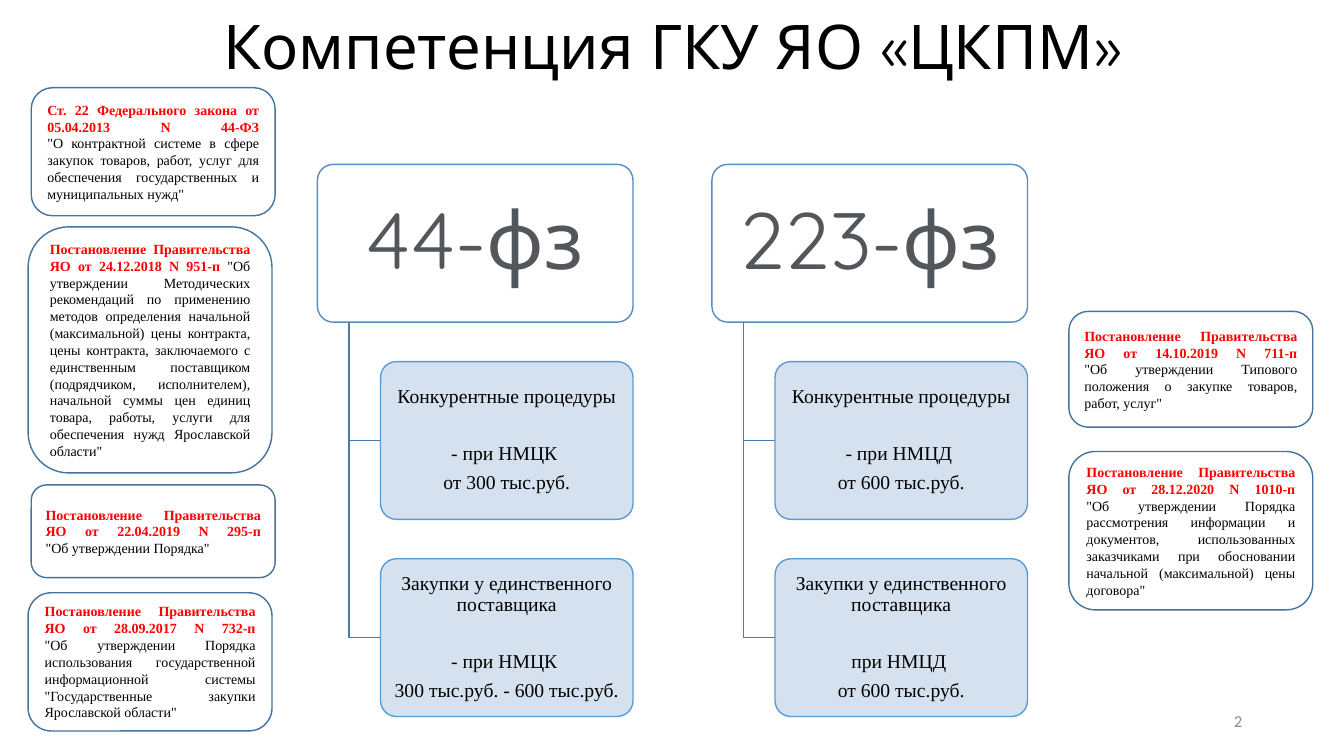
from lxml import etree
from pptx import Presentation
from pptx import util as u
from pptx.dml.color import RGBColor
from pptx.enum import shapes, text
from pptx.oxml.ns import qn

COLORS = {
    "white": "FFFFFF", "black": "000000", "red": "FF0000", "grey": "8C8C8C",
    "card": "D2DEEF", "card_line": "5B9BD5", "law_line": "538DC1",
    "branch": "497CAB", "note_line": "43739E",
    "law_dark": "53575C", "law_light": "C5C7CA",
}
CELL = 0.313  # inches, side of one grid cell
SERIF, DISPLAY, PLAIN = "Times New Roman", "Quicksand", "Calibri"

# Sizes of the two trees, in grid cells
TREE_LEFT, TREE_TOP, TREE_STEP = 10.06, 5.21, 12.5
LAW_WIDTH, BOX_HEIGHT, ROW_STEP = 10, 5, 6.25
STEM_OFFSET, CARD_OFFSET, CARD_WIDTH = 1, 2, 8
NOTE_WIDTH = 7.73

TREES = [
    ("44-фз", [
        ("Конкурентные процедуры", "- при НМЦК ", "от 300 тыс.руб."),
        ("Закупки у единственного поставщика", "- при НМЦК ",
         "300 тыс.руб. - 600 тыс.руб."),
    ]),
    ("223-фз", [
        ("Конкурентные процедуры", "- при НМЦД ", "от 600 тыс.руб."),
        ("Закупки у единственного поставщика", "при НМЦД ", "от 600 тыс.руб."),
    ]),
]
DECREE = "Постановление Правительства ЯО от "
# Column, row, height in cells; heading; body. A heading ending in \n stands on its own lines.
NOTES = [
    (0.99, 2.78, 4.06, "Ст. 22 Федерального закона от 05.04.2013 N 44-ФЗ\n",
     "\"О контрактной системе в сфере закупок товаров, работ, услуг для "
     "обеспечения государственных и муниципальных нужд\""),
    (0.89, 7.19, 7.8, DECREE + "24.12.2018 N 951-п ",
     "\"Об утверждении Методических рекомендаций по применению методов "
     "определения начальной (максимальной) цены контракта, цены контракта, "
     "заключаемого с единственным поставщиком (подрядчиком, исполнителем), "
     "начальной суммы цен единиц товара, работы, услуги для обеспечения нужд "
     "Ярославской области\""),
    (0.99, 15.37, 2.94, DECREE + "22.04.2019 N 295-п\n",
     "\"Об утверждении Порядка\""),
    (0.89, 18.79, 4.38, DECREE + "28.09.2017 N 732-п\n",
     "\"Об утверждении Порядка использования государственной информационной "
     "системы \"Государственные закупки Ярославской области\""),
    (33.87, 9.87, 3.67, DECREE + "14.10.2019 N 711-п\n",
     "\"Об утверждении Типового положения о закупке товаров, работ, услуг\""),
    (33.87, 14.31, 5.02, DECREE + "28.12.2020 N 1010-п\n",
     "\"Об утверждении Порядка рассмотрения информации и документов, "
     "использованных заказчиками при обосновании начальной (максимальной) "
     "цены договора\""),
]


def color(name):
    return RGBColor.from_string(COLORS[name])


def cells(*counts):
    return [u.Inches(count * CELL) for count in counts]


class Board:
    """Holds the current slide and draws its elements in grid cells."""

    def __init__(self, deck):
        self.deck = deck
        self.page = deck.slides.add_slide(deck.slide_layouts[5])

    def style(self, para, size, font, shade="black", align="CENTER"):
        para.alignment = getattr(text.PP_ALIGN, align)
        para.font.size = u.Pt(size)
        para.font.name = font
        para.font.color.rgb = color(shade)

    def title(self, wording):
        box = self.page.shapes.title
        box.left, box.top = u.Inches(0.92), 0
        box.width, box.height = u.Inches(11.5), u.Inches(0.99)
        box.text_frame.text = wording
        box.text_frame.vertical_anchor = text.MSO_ANCHOR.MIDDLE
        para = box.text_frame.paragraphs[0]
        para.line_spacing = 0.9
        self.style(para, 44, DISPLAY)

    def rounded(self, column, row, width, height, fill, line, insets=(0.1, 0.05)):
        box = self.page.shapes.add_shape(
            shapes.MSO_SHAPE.ROUNDED_RECTANGLE, *cells(column, row, width, height))
        box.shadow.inherit = False
        box.fill.solid()
        box.fill.fore_color.rgb = color(fill)
        box.line.color.rgb = color(line)
        box.line.width = u.Pt(1)
        frame = box.text_frame
        frame.word_wrap = True
        frame.vertical_anchor = text.MSO_ANCHOR.MIDDLE
        frame.margin_left = frame.margin_right = u.Inches(insets[0])
        frame.margin_top = frame.margin_bottom = u.Inches(insets[1])
        return box

    def law(self, column, row, name):
        box = self.rounded(column, row, LAW_WIDTH, BOX_HEIGHT, "white", "law_line",
                           (0.12, 0.08))
        box.adjustments[0] = 0.1
        para = box.text_frame.paragraphs[0]
        para.line_spacing = 0.9
        self.style(para, 57, DISPLAY, "law_dark")
        span = para.add_run()
        span.text = name
        span.font.fill.gradient()
        span.font.fill.gradient_angle = 270
        shades = [(0.21, "law_dark"), (0.88, "law_light")]
        for stop, (position, shade) in zip(span.font.fill.gradient_stops, shades):
            stop.position = position
            stop.color.rgb = color(shade)

    def branch(self, column, top, bottom):
        """Draw an elbow from under a law box to the side of a card."""
        start_x, start_y, end_x, end_y = cells(
            column, top, column + CARD_OFFSET - STEM_OFFSET, bottom)
        builder = self.page.shapes.build_freeform(start_x, start_y)
        builder.add_line_segments([(start_x, end_y), (end_x, end_y)], close=False)
        elbow = builder.convert_to_shape()
        elbow.shadow.inherit = False
        elbow.fill.background()
        elbow.line.color.rgb = color("branch")
        elbow.line.width = u.Pt(1)

    def card(self, column, row, lines):
        box = self.rounded(column, row, CARD_WIDTH, BOX_HEIGHT, "card", "card_line",
                           (0.03, 0.02))
        box.adjustments[0] = 0.1
        fill_color = box.fill._xPr.find(qn("a:solidFill"))[0]
        etree.SubElement(fill_color, qn("a:alpha"), val="90000")
        frame = box.text_frame
        frame.text = "\n".join(lines)
        for index, para in enumerate(frame.paragraphs):
            para.line_spacing = 0.9
            para.space_after = u.Pt(5.5 if index else 25.5)
            self.style(para, 14, SERIF)

    def note(self, column, row, height, heading, body):
        box = self.rounded(column, row, NOTE_WIDTH, height, "white", "note_line")
        para = box.text_frame.paragraphs[0]
        self.style(para, 10, SERIF, align="JUSTIFY")
        span = para.add_run()
        span.text = heading.rstrip("\n")
        span.font.bold = True
        span.font.color.rgb = color("red")
        if heading.endswith("\n"):
            para.add_line_break()
        span = para.add_run()
        span.text = body
        span.font.color.rgb = color("black")

    def page_number(self, number):
        box = self.page.shapes.add_textbox(
            u.Inches(9.42), u.Inches(6.95), u.Inches(3), u.Inches(0.4))
        frame = box.text_frame
        frame.word_wrap = True
        frame.vertical_anchor = text.MSO_ANCHOR.MIDDLE
        frame.text = number
        self.style(frame.paragraphs[0], 12, PLAIN, "grey", "RIGHT")


def main():
    deck = Presentation()
    deck.slide_width, deck.slide_height = u.Inches(13.33), u.Inches(7.5)
    board = Board(deck)
    board.title("Компетенция ГКУ ЯО «ЦКПМ»")
    for tree, (law, cards) in enumerate(TREES):
        left = TREE_LEFT + tree * TREE_STEP
        board.law(left, TREE_TOP, law)
        for level, lines in enumerate(cards, start=1):
            row = TREE_TOP + level * ROW_STEP
            board.branch(left + STEM_OFFSET, TREE_TOP + BOX_HEIGHT, row + BOX_HEIGHT / 2)
            board.card(left + CARD_OFFSET, row, lines)
    board.page_number("2")
    for note in NOTES:
        board.note(*note)
    deck.save("out.pptx")


if __name__ == "__main__":
    main()
